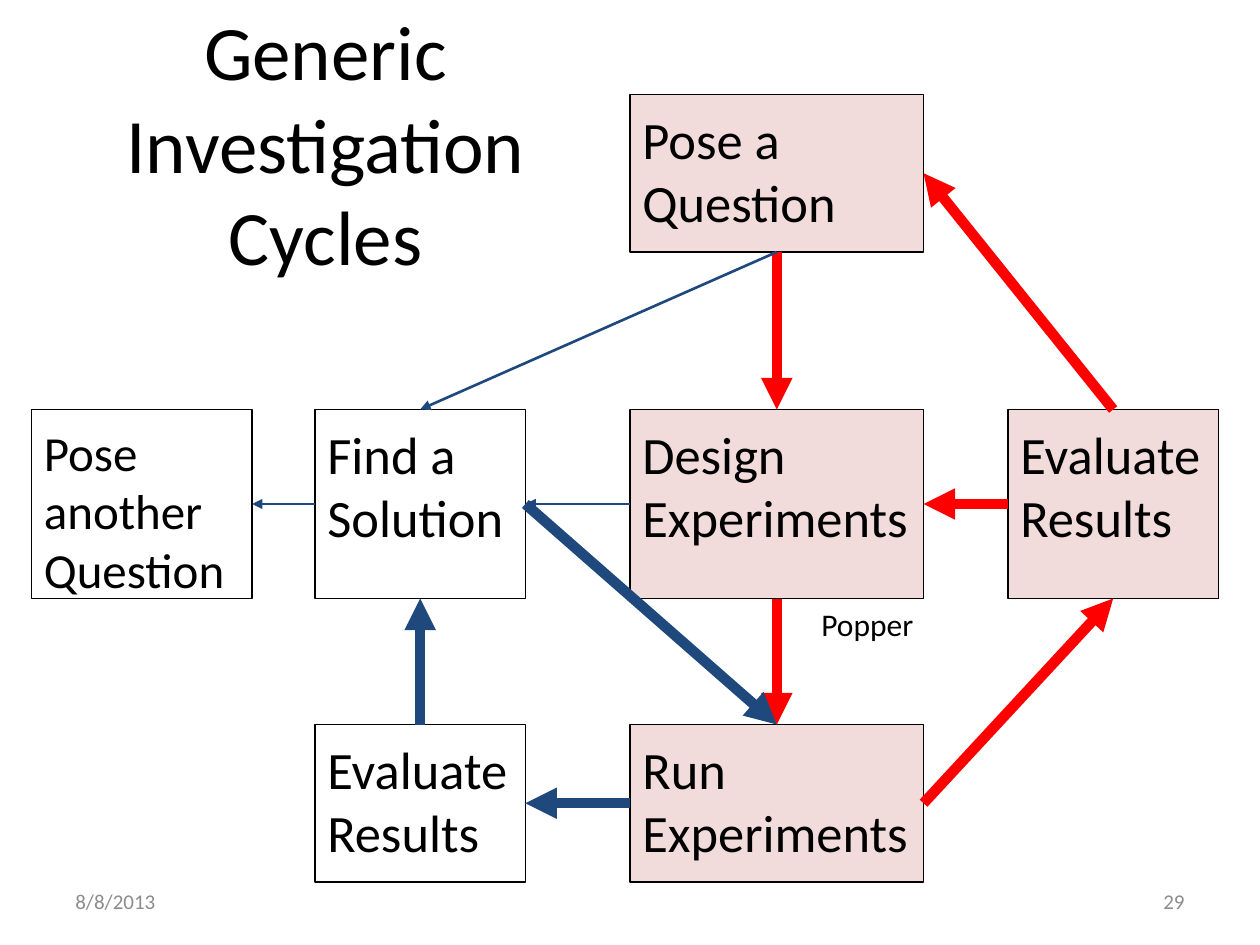
from pptx import Presentation
from pptx.dml.color import RGBColor
from pptx.enum.shapes import MSO_CONNECTOR as Connector, MSO_SHAPE as Shape
from pptx.enum.text import MSO_ANCHOR as Anchor, PP_ALIGN as Align
from pptx.oxml.ns import qn
from pptx.util import Inches, Pt
from lxml import etree

COLORS = {"black": "000000", "pink": "F2DCDB", "red": "FF0000",
          "navy": "1F497D", "gray": "8C8C8C"}
TOP, LEFT, BOTTOM, RIGHT = range(4)


def color(name):
    return RGBColor.from_string(COLORS[name])


def write(shape, lines, size, ink="black", align=Align.LEFT,
          anchor=Anchor.TOP, margin=0.05, wrap=True):
    frame = shape.text_frame
    frame.word_wrap = wrap
    frame.vertical_anchor = anchor
    frame.margin_left = frame.margin_right = Inches(0.1)
    frame.margin_top = frame.margin_bottom = Inches(margin)
    for index, line in enumerate(lines):
        para = frame.add_paragraph() if index else frame.paragraphs[0]
        para.alignment = align
        span = para.add_run()
        span.text = line
        span.font.name = "Calibri"
        span.font.size = Pt(size)
        span.font.color.rgb = color(ink)


deck = Presentation()
deck.slide_width, deck.slide_height = Inches(10), Inches(7.5)
page = deck.slides.add_slide(deck.slide_layouts[6])

# Title
title = page.shapes.add_textbox(Inches(0.5), Inches(0.08), Inches(4.17), Inches(2.25))
write(title, ["Generic Investigation Cycles"], 44, align=Align.CENTER,
      anchor=Anchor.BOTTOM, margin=0.1)

# Steps: left, top, width, height, fill, text size, lines
steps = {
    "pose": (5, 0.75, 2.33, 1.25, "pink", 30, ["Pose a Question"]),
    "design": (5, 3.25, 2.33, 1.5, "pink", 30, ["Design", "Experiments"]),
    "solve": (2.5, 3.25, 1.67, 1.5, None, 30, ["Find a Solution"]),
    "check": (2.5, 5.75, 1.67, 1.25, None, 30, ["Evaluate Results"]),
    "run": (5, 5.75, 2.33, 1.25, "pink", 30, ["Run", "Experiments"]),
    "evaluate": (8, 3.25, 1.67, 1.5, "pink", 30, ["Evaluate Results"]),
    "another": (0.25, 3.25, 1.75, 1.5, None, 28, ["Pose another", "Question"]),
}
boxes = {}
for name, (left, top, width, height, fill, size, lines) in steps.items():
    box = page.shapes.add_shape(Shape.RECTANGLE, Inches(left), Inches(top),
                                Inches(width), Inches(height))
    box.shadow.inherit = False
    if fill:
        box.fill.solid()
        box.fill.fore_color.rgb = color(fill)
    else:
        box.fill.background()
    box.line.color.rgb = color("black")
    box.line.width = Pt(0.75)
    write(box, lines, size, margin=0.1)
    boxes[name] = box

# Arrows: start box and side, end box and side, colour, width
arrows = [
    ("pose", BOTTOM, "design", TOP, "red", 6),
    ("pose", BOTTOM, "solve", TOP, "navy", 1.5),
    ("evaluate", TOP, "pose", RIGHT, "red", 6),
    ("design", BOTTOM, "run", TOP, "red", 6),
    ("solve", RIGHT, "run", TOP, "navy", 6),
    ("run", LEFT, "check", RIGHT, "navy", 6),
    ("run", RIGHT, "evaluate", BOTTOM, "red", 6),
    ("check", TOP, "solve", BOTTOM, "navy", 6),
    ("evaluate", LEFT, "design", RIGHT, "red", 6),
    ("solve", LEFT, "another", RIGHT, "navy", 1.5),
    ("design", LEFT, "solve", RIGHT, "navy", 1.5),
]
for start, start_side, end, end_side, ink, width in arrows:
    arrow = page.shapes.add_connector(Connector.STRAIGHT, 0, 0, 0, 0)
    arrow.begin_connect(boxes[start], start_side)
    arrow.end_connect(boxes[end], end_side)
    arrow.line.color.rgb = color(ink)
    arrow.line.width = Pt(width)
    etree.SubElement(arrow.line._get_or_add_ln(), qn("a:tailEnd"), type="triangle")
    etree.SubElement(arrow._element.spPr, qn("a:effectLst"))

# Label beside the arrow to Run Experiments
label = page.shapes.add_textbox(Inches(6.42), Inches(4.75), Inches(0.95), Inches(0.41))
write(label, ["Popper"], 18, wrap=False)

# Footer: date and page number
for left, text, align in [(0.5, "8/8/2013", Align.LEFT), (7.17, "29", Align.RIGHT)]:
    footer = page.shapes.add_textbox(Inches(left), Inches(6.95), Inches(2.33), Inches(0.4))
    write(footer, [text], 12, "gray", align, Anchor.MIDDLE)

deck.save("out.pptx")
